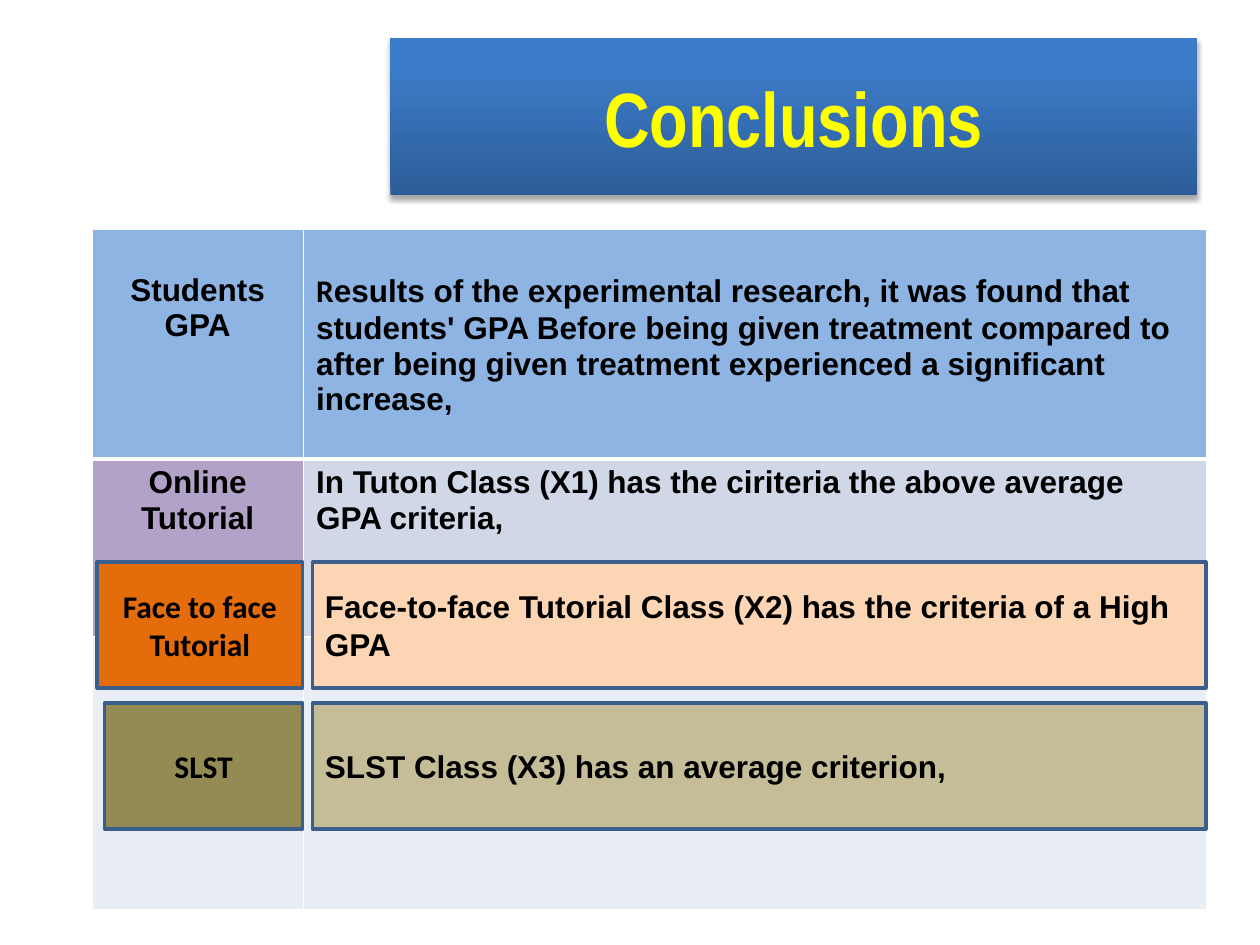
from dataclasses import dataclass

from lxml.etree import SubElement
from pptx import Presentation
from pptx.dml.color import RGBColor
from pptx.enum.shapes import MSO_SHAPE
from pptx.enum.text import MSO_ANCHOR, PP_ALIGN
from pptx.oxml import parse_xml
from pptx.oxml.ns import nsdecls, qn
from pptx.util import Cm, Pt


@dataclass(frozen=True)
class Theme:
    title_text: str = "FFFF00"
    title_low: str = "2C5D98"
    title_high: str = "3C7BC7"
    text: str = "000000"
    border: str = "FFFFFF"
    outline: str = "3A5F8C"
    title_size: int = 44
    body_size: int = 18
    title_font: str = "Arial Narrow"
    body_font: str = "Arial"
    label_font: str = "Calibri"


THEME = Theme()


@dataclass(frozen=True)
class Row:
    height: float
    label: str
    finding: tuple
    fills: tuple
    top_margin: float = 0.13
    bottom_border: int = 1


@dataclass(frozen=True)
class Band:
    """A label box and a finding box side by side; lengths in cm."""
    top: float
    label_left: float
    label: str
    finding: str
    fills: tuple


COLUMNS = (4.27, 18.21)
LABEL_RIGHT = 6.1
FINDING_LEFT, FINDING_RIGHT = 6.3, 24.31
BAND_HEIGHT = 2.54

ROWS = (
    Row(4.62, "Students GPA",
        (("R", THEME.label_font),
         ("esults of the experimental research, it was found that students' GPA "
          "Before being given treatment compared to after being given treatment "
          "experienced a significant increase,", THEME.body_font)),
        ("8EB4E3", "8EB4E3"), top_margin=0.87, bottom_border=3),
    Row(3.59, "Online Tutorial",
        (("In Tuton Class (X1) has the ciriteria the above average GPA criteria,",
          THEME.body_font),),
        ("B3A2C7", "D0D8E8")),
    Row(5.49, "", (), ("E9EDF4", "E9EDF4")),
)

BANDS = (
    Band(11.33, 1.96, "Face to face Tutorial",
         "Face-to-face Tutorial Class (X2) has the criteria of a High GPA",
         ("E46C0A", "FCD5B5")),
    Band(14.17, 2.11, "SLST", "SLST Class (X3) has an average criterion,",
         ("948A54", "C4BD97")),
)


def rgb(color: str) -> RGBColor:
    return RGBColor.from_string(color)


def add_text(p, text: str, *, font: str = THEME.body_font, size: int = THEME.body_size,
             color: str = THEME.text, align=PP_ALIGN.LEFT) -> None:
    p.alignment = align
    r = p.add_run()
    r.text = text
    r.font.name = font
    r.font.size = Pt(size)
    r.font.bold = True
    r.font.color.rgb = rgb(color)


def set_borders(cell, bottom: int, top: int) -> None:
    """Draw the cell's borders; widths in points."""
    pr = cell._tc.get_or_add_tcPr()
    widths = {"a:lnL": 1, "a:lnR": 1, "a:lnT": top, "a:lnB": bottom}
    for i, (tag, width) in enumerate(widths.items()):
        ln = parse_xml(f'<{tag} {nsdecls("a")} w="{Pt(width)}"><a:solidFill>'
                       f'<a:srgbClr val="{THEME.border}"/></a:solidFill></{tag}>')
        pr.insert(i, ln)


def add_title(slide, text: str) -> None:
    sp = slide.shapes.title
    sp.left, sp.top, sp.width, sp.height = Cm(7.87), Cm(0.76), Cm(16.26), Cm(3.18)
    sp.fill.gradient()
    sp.fill.gradient_angle = 90
    low, high = sp.fill.gradient_stops
    low.color.rgb, low.position = rgb(THEME.title_low), 0
    high.color.rgb, high.position = rgb(THEME.title_high), 0.8
    sp.shadow.inherit = False
    effects = sp._element.spPr.find(qn("a:effectLst"))
    shadow = SubElement(effects, qn("a:outerShdw"), blurRad="40000", dist="23000",
                        dir="5400000", rotWithShape="0")
    black = SubElement(shadow, qn("a:srgbClr"), val="000000")
    SubElement(black, qn("a:alpha"), val="35000")
    tf = sp.text_frame
    tf.vertical_anchor = MSO_ANCHOR.MIDDLE
    add_text(tf.paragraphs[0], text, font=THEME.title_font, size=THEME.title_size,
             color=THEME.title_text, align=PP_ALIGN.CENTER)


def add_findings_table(slide, rows: tuple) -> None:
    height = sum(row.height for row in rows)
    table = slide.shapes.add_table(len(rows), len(COLUMNS), Cm(1.85), Cm(4.63),
                                   Cm(sum(COLUMNS)), Cm(height)).table
    for column, width in zip(table.columns, COLUMNS):
        column.width = Cm(width)
    top_border = 1
    for i, row in enumerate(rows):
        table.rows[i].height = Cm(row.height)
        for j, fill in enumerate(row.fills):
            cell = table.cell(i, j)
            cell.margin_top = Cm(row.top_margin)
            cell.fill.solid()
            cell.fill.fore_color.rgb = rgb(fill)
            set_borders(cell, row.bottom_border, top_border)
        top_border = row.bottom_border
        if row.label:
            add_text(table.cell(i, 0).text_frame.paragraphs[0], row.label,
                     align=PP_ALIGN.CENTER)
        for text, font in row.finding:
            add_text(table.cell(i, 1).text_frame.paragraphs[0], text, font=font)


def add_box(slide, left: float, right: float, top: float, fill: str, text: str,
            **text_format) -> None:
    sp = slide.shapes.add_shape(MSO_SHAPE.RECTANGLE, Cm(left), Cm(top),
                                Cm(right - left), Cm(BAND_HEIGHT))
    sp.shadow.inherit = False
    sp.fill.solid()
    sp.fill.fore_color.rgb = rgb(fill)
    sp.line.color.rgb = rgb(THEME.outline)
    sp.line.width = Pt(2)
    tf = sp.text_frame
    tf.word_wrap = True
    tf.vertical_anchor = MSO_ANCHOR.MIDDLE
    add_text(tf.paragraphs[0], text, **text_format)


def add_band(slide, band: Band) -> None:
    label_fill, finding_fill = band.fills
    add_box(slide, band.label_left, LABEL_RIGHT, band.top, label_fill, band.label,
            font=THEME.label_font, align=PP_ALIGN.CENTER)
    add_box(slide, FINDING_LEFT, FINDING_RIGHT, band.top, finding_fill, band.finding)


def main() -> None:
    prs = Presentation()
    prs.slide_width, prs.slide_height = Cm(25.4), Cm(19.05)
    slide = prs.slides.add_slide(prs.slide_layouts[5])
    add_title(slide, "Conclusions")
    add_findings_table(slide, ROWS)
    for band in BANDS:
        add_band(slide, band)
    prs.save("out.pptx")


if __name__ == "__main__":
    main()
